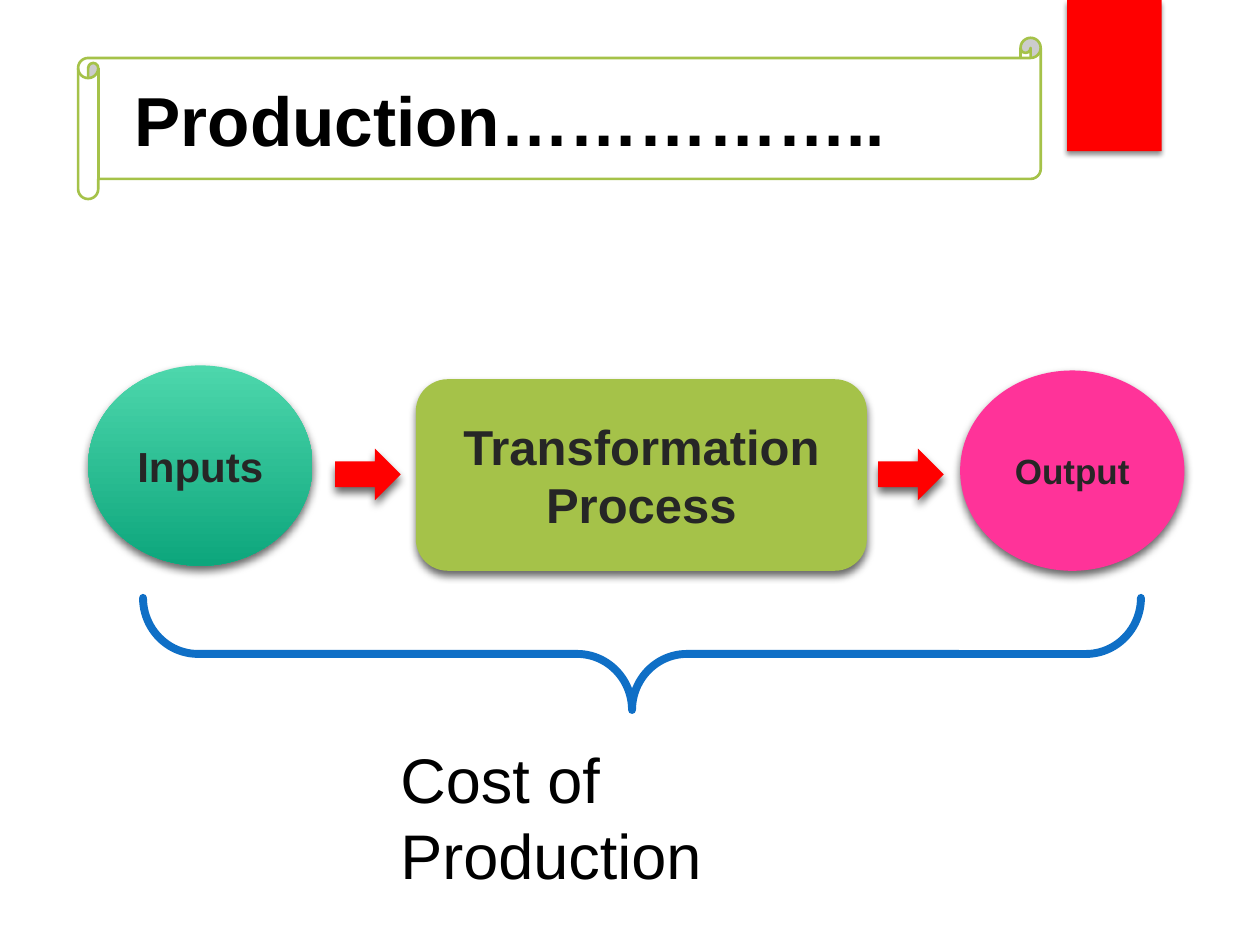
from lxml import etree
from pptx import Presentation
from pptx.dml.color import RGBColor
from pptx.enum import shapes, text
from pptx.oxml import ns
from pptx.util import Inches, Pt

WHITE = RGBColor(0xFF, 0xFF, 0xFF)
BLACK = RGBColor(0, 0, 0)
CHARCOAL = RGBColor(0x26, 0x26, 0x26)
RED = RGBColor(0xFF, 0, 0)
GREEN = RGBColor(0xA5, 0xC2, 0x49)
MINT = RGBColor(0x4D, 0xD7, 0xAC)
TEAL = RGBColor(0x0D, 0xA6, 0x7C)
PINK = RGBColor(0xFF, 0x33, 0x99)
BLUE = RGBColor(0x0F, 0x6F, 0xC6)

KIND = shapes.MSO_SHAPE
SOFT_SHADOW = {"alpha": 45, "blur": 3, "dist": 2}
DEEP_SHADOW = {"alpha": 60, "blur": 5, "dist": 3}


class SlideBuilder:
    font_name = "Arial"

    def __init__(self, slide):
        self.slide = slide
        self.container = slide.shapes

    def start_group(self):
        self.container = self.slide.shapes.add_group_shape().shapes

    def end_group(self):
        self.container = self.slide.shapes

    def set_text(self, frame, words, align=text.PP_ALIGN.LEFT, color=BLACK, **font):
        frame.text = words
        paragraph = frame.paragraphs[0]
        paragraph.alignment = align
        run_font = paragraph.runs[0].font
        for name, value in {"name": self.font_name, **font}.items():
            setattr(run_font, name, value)
        run_font.color.rgb = color

    def title(self, words, box, size):
        title = self.slide.shapes.title
        for name, value in zip(("left", "top", "width", "height"), box):
            setattr(title, name, Inches(value))
        frame = title.text_frame
        self.set_text(frame, words, size=Pt(size), bold=True)
        frame.vertical_anchor = text.MSO_ANCHOR.MIDDLE
        frame.auto_size = text.MSO_AUTO_SIZE.NONE

    def shadow(self, shape, alpha, blur, dist):
        effects = shape._element.spPr.find(ns.qn("a:effectLst"))
        outer = etree.SubElement(
            effects, ns.qn("a:outerShdw"), blurRad=str(Pt(blur)),
            dist=str(Pt(dist)), dir="5400000", rotWithShape="0")
        tint = etree.SubElement(outer, ns.qn("a:srgbClr"), val="000000")
        etree.SubElement(tint, ns.qn("a:alpha"), val=str(alpha * 1000))

    def shape(self, kind, box, fill=None, line=None, shadow=None):
        shape = self.container.add_shape(kind, *map(Inches, box))
        shape.shadow.inherit = False
        if fill is None:
            shape.fill.background()
        elif isinstance(fill, RGBColor):
            shape.fill.solid()
            shape.fill.fore_color.rgb = fill
        else:
            shape.fill.gradient()
            shape.fill.gradient_angle = 270
            for stop, position, color in zip(shape.fill.gradient_stops, (0, 1), fill):
                stop.position = position
                stop.color.rgb = color
        if line:
            shape.line.color.rgb, shape.line.width = line[0], Pt(line[1])
        else:
            shape.line.fill.background()
        if shadow:
            self.shadow(shape, **shadow)
        return shape

    def stage(self, kind, box, fill, words, size):
        stage = self.shape(kind, box, fill, shadow=DEEP_SHADOW)
        self.set_text(stage.text_frame, words, text.PP_ALIGN.CENTER, CHARCOAL,
                      size=Pt(size), bold=True)
        stage.text_frame.vertical_anchor = text.MSO_ANCHOR.MIDDLE

    def brace(self, box, color, width, adjustments):
        brace = self.shape(KIND.RIGHT_BRACE, box, line=(color, width))
        brace.rotation = 90
        for index, value in enumerate(adjustments):
            brace.adjustments[index] = value
        brace.line._get_or_add_ln().set("cap", "rnd")

    def caption(self, words, box, size):
        caption = self.container.add_textbox(*map(Inches, box))
        caption.text_frame.word_wrap = True
        self.set_text(caption.text_frame, words, size=Pt(size))


def main():
    deck = Presentation()
    deck.slide_width, deck.slide_height = Inches(10), Inches(7.5)
    builder = SlideBuilder(deck.slides.add_slide(deck.slide_layouts[5]))

    builder.shape(KIND.HORIZONTAL_SCROLL, (0.62, 0.3, 7.64, 1.28), WHITE, (GREEN, 1.5))
    builder.shape(KIND.RECTANGLE, (8.47, 0, 0.75, 1.2), RED, shadow=SOFT_SHADOW)
    title_element = builder.slide.shapes.title._element
    title_element.getparent().append(title_element)
    builder.title("Production……………..", (0.97, 0.55, 6.94, 0.78), 39.6)

    builder.start_group()
    builder.stage(KIND.ROUNDED_RECTANGLE, (3.3, 3.01, 3.58, 1.52), GREEN,
                  "Transformation Process", 28)
    builder.stage(KIND.OVAL, (0.7, 2.9, 1.78, 1.59), (MINT, TEAL), "Inputs", 24)
    builder.stage(KIND.OVAL, (7.62, 2.94, 1.78, 1.59), PINK, "Output", 20)
    for arrow_left in (2.66, 6.97):
        builder.shape(KIND.RIGHT_ARROW, (arrow_left, 3.56, 0.52, 0.41), RED,
                      shadow=DEEP_SHADOW)
    builder.end_group()

    builder.brace((4.65, 1.23, 0.89, 7.92), BLUE, 4.5, (0.49, 0.51))
    builder.caption("Cost of Production", (3.08, 5.83, 4, 0.71), 36)

    deck.save("out.pptx")


if __name__ == "__main__":
    main()
